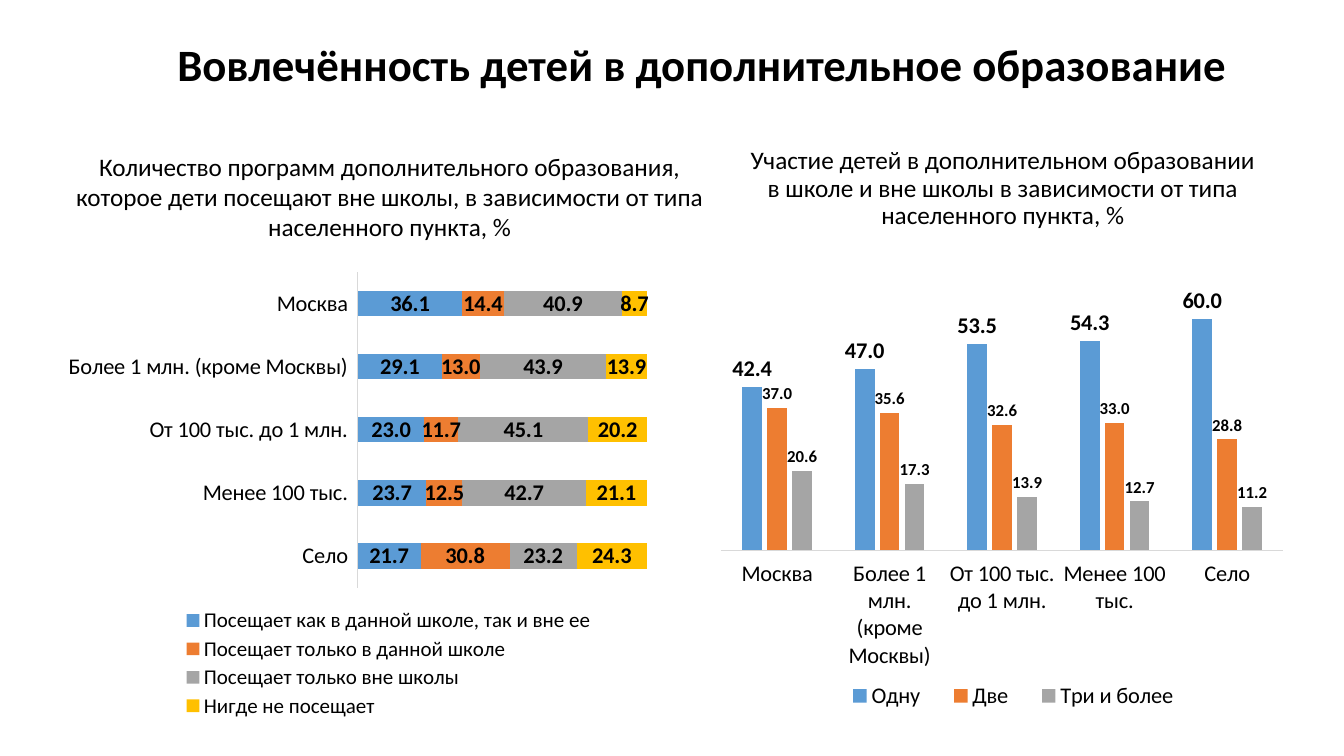
from dataclasses import dataclass

from lxml import etree
from pptx import Presentation
from pptx.chart.chart import Chart
from pptx.chart.data import CategoryChartData
from pptx.dml.color import RGBColor
from pptx.enum.chart import (XL_CHART_TYPE, XL_LABEL_POSITION,
                             XL_LEGEND_POSITION, XL_TICK_LABEL_POSITION,
                             XL_TICK_MARK)
from pptx.enum.text import MSO_ANCHOR, MSO_AUTO_SIZE, PP_ALIGN
from pptx.oxml.ns import qn
from pptx.util import Emu, Pt

EMU_PER_PX = 9144  # 100 px to the inch
FONT = "Calibri"
COLORS = {
    "text": "000000",
    "axis": "D9D9D9",
    "blue": "5B9BD5",
    "orange": "ED7D31",
    "grey": "A5A5A5",
    "yellow": "FFC000",
}
COLUMNS = XL_CHART_TYPE.COLUMN_CLUSTERED
STACKED_BARS = XL_CHART_TYPE.BAR_STACKED
OUTSIDE = XL_LABEL_POSITION.OUTSIDE_END
CENTER = XL_LABEL_POSITION.CENTER
NO_TICKS = XL_TICK_MARK.NONE
LABELS_LOW = XL_TICK_LABEL_POSITION.LOW
LEGEND_BOTTOM = XL_LEGEND_POSITION.BOTTOM

SETTLEMENTS = ("Москва", "Более 1 млн. (кроме Москвы)",
               "От 100 тыс. до 1 млн.", "Менее 100 тыс.", "Село")


@dataclass(frozen=True)
class Area:
    left: int
    top: int
    width: int
    height: int

    def emu(self) -> list[Emu]:
        return [px(n) for n in (self.left, self.top, self.width, self.height)]


@dataclass(frozen=True)
class Series:
    name: str
    values: tuple[float, ...]
    color: str
    label_size: int = 16


@dataclass(frozen=True)
class BarChart:
    kind: int
    area: Area
    plot: Area
    legend: Area
    legend_size: int
    gap: int
    overlap: int
    maximum: int
    label_position: int
    reverse: bool
    series: tuple[Series, ...]


@dataclass(frozen=True)
class Caption:
    text: str
    area: Area
    line_spacing: float
    space_before: int


CAPTIONS = (
    Caption("Участие детей в дополнительном образовании в школе и вне школы "
            "в зависимости от типа населенного пункта, %",
            Area(732, 142, 525, 101), 0.9, 10),
    Caption("Количество программ дополнительного образования, которое дети "
            "посещают вне школы, в зависимости от типа населенного пункта, %",
            Area(53, 145, 667, 101), 1.0, 0),
)

CHARTS = (
    BarChart(
        COLUMNS, Area(704, 269, 580, 441), Area(715, 278, 558, 268),
        Area(820, 675, 370, 35), 16, 219, -27, 70, OUTSIDE, False,
        (Series("Одну", (42.4, 47, 53.5, 54.3, 60), "blue"),
         Series("Две", (37, 35.6, 32.6, 33, 28.8), "orange", 12),
         Series("Три и более", (20.6, 17.3, 13.9, 12.7, 11.2), "grey", 12))),
    BarChart(
        STACKED_BARS, Area(61, 261, 651, 459), Area(355, 270, 344, 313),
        Area(164, 600, 443, 116), 15, 150, 100, 120, CENTER, True,
        (Series("Посещает как в данной школе, так и вне ее",
                (36.1, 29.1, 23, 23.7, 21.7), "blue"),
         Series("Посещает только в данной школе",
                (14.4, 13, 11.7, 12.5, 30.8), "orange"),
         Series("Посещает только вне школы",
                (40.9, 43.9, 45.1, 42.7, 23.2), "grey"),
         Series("Нигде не посещает",
                (8.7, 13.9, 20.2, 21.1, 24.3), "yellow"))),
)


def px(length: int) -> Emu:
    return Emu(length * EMU_PER_PX)


def color(name: str) -> RGBColor:
    return RGBColor.from_string(COLORS[name])


def style_font(font, size: int, bold: bool = False) -> None:
    font.name = FONT
    font.size = Pt(size)
    font.bold = bold
    font.color.rgb = color("text")


def write_text(box, text: str, *, size: int, bold: bool = False,
               line_spacing: float = 1.0, space_before: int = 0,
               anchor=MSO_ANCHOR.TOP) -> None:
    frame = box.text_frame
    frame.word_wrap = True
    frame.auto_size = MSO_AUTO_SIZE.NONE
    frame.vertical_anchor = anchor
    para = frame.paragraphs[0]
    para.alignment = PP_ALIGN.CENTER
    para.line_spacing = line_spacing
    para.space_before = Pt(space_before)
    span = para.add_run()
    span.text = text
    style_font(span.font, size, bold)


def place_part(parent, index: int, part: Area, area: Area,
               inner: bool = False) -> None:
    """Fix a plot or legend at its share of the chart area."""
    for old in parent.findall(qn("c:layout")):
        parent.remove(old)
    layout = etree.Element(qn("c:layout"))
    parent.insert(index, layout)
    manual = etree.SubElement(layout, qn("c:manualLayout"))
    settings = {"layoutTarget": "inner"} if inner else {}
    settings |= {
        "xMode": "edge",
        "yMode": "edge",
        "x": (part.left - area.left) / area.width,
        "y": (part.top - area.top) / area.height,
        "w": part.width / area.width,
        "h": part.height / area.height,
    }
    for tag, value in settings.items():
        etree.SubElement(manual, qn(f"c:{tag}")).set("val", str(value))


def style_axes(chart: Chart, maximum: int, reverse: bool) -> None:
    values = chart.value_axis
    values.visible = False
    values.has_major_gridlines = False
    values.minimum_scale = 0
    values.maximum_scale = maximum
    categories = chart.category_axis
    categories.major_tick_mark = NO_TICKS
    categories.minor_tick_mark = NO_TICKS
    categories.tick_label_position = LABELS_LOW
    categories.reverse_order = reverse
    categories.format.line.color.rgb = color("axis")
    categories.format.line.width = Pt(0.75)
    style_font(categories.tick_labels.font, 16)


def draw_chart(page, item: BarChart) -> None:
    data = CategoryChartData(number_format="0.0")
    data.categories = SETTLEMENTS
    for series in item.series:
        data.add_series(series.name, series.values)
    chart = page.shapes.add_chart(item.kind, *item.area.emu(), data).chart
    chart.has_title = False
    style_font(chart.font, 12, bold=True)
    style_axes(chart, item.maximum, item.reverse)

    plot = chart.plots[0]
    plot.vary_by_categories = False
    plot.gap_width = item.gap
    plot.overlap = item.overlap
    for bars, series in zip(plot.series, item.series):
        bars.format.fill.solid()
        bars.format.fill.fore_color.rgb = color(series.color)
        labels = bars.data_labels
        labels.show_value = True
        labels.number_format = "0.0"
        labels.number_format_is_linked = False
        labels.position = item.label_position
        style_font(labels.font, series.label_size, bold=True)

    chart.has_legend = True
    legend = chart.legend
    legend.position = LEGEND_BOTTOM
    legend.include_in_layout = False
    style_font(legend.font, item.legend_size)
    root = chart.element
    place_part(root.find(".//" + qn("c:plotArea")), 0, item.plot, item.area, True)
    place_part(root.find(".//" + qn("c:legend")), 1, item.legend, item.area)


def main() -> None:
    deck = Presentation()
    deck.slide_width, deck.slide_height = px(1333), px(750)
    page = deck.slides.add_slide(deck.slide_layouts[5])
    title = page.shapes.title
    title.left, title.top, title.width, title.height = Area(144, 16, 1105, 80).emu()
    write_text(title, "Вовлечённость детей в дополнительное образование",
               size=32, bold=True, line_spacing=0.9, anchor=MSO_ANCHOR.BOTTOM)
    for caption in CAPTIONS:
        write_text(page.shapes.add_textbox(*caption.area.emu()), caption.text,
                   size=18, line_spacing=caption.line_spacing,
                   space_before=caption.space_before)
    for item in CHARTS:
        draw_chart(page, item)
    deck.save("out.pptx")


if __name__ == "__main__":
    main()
